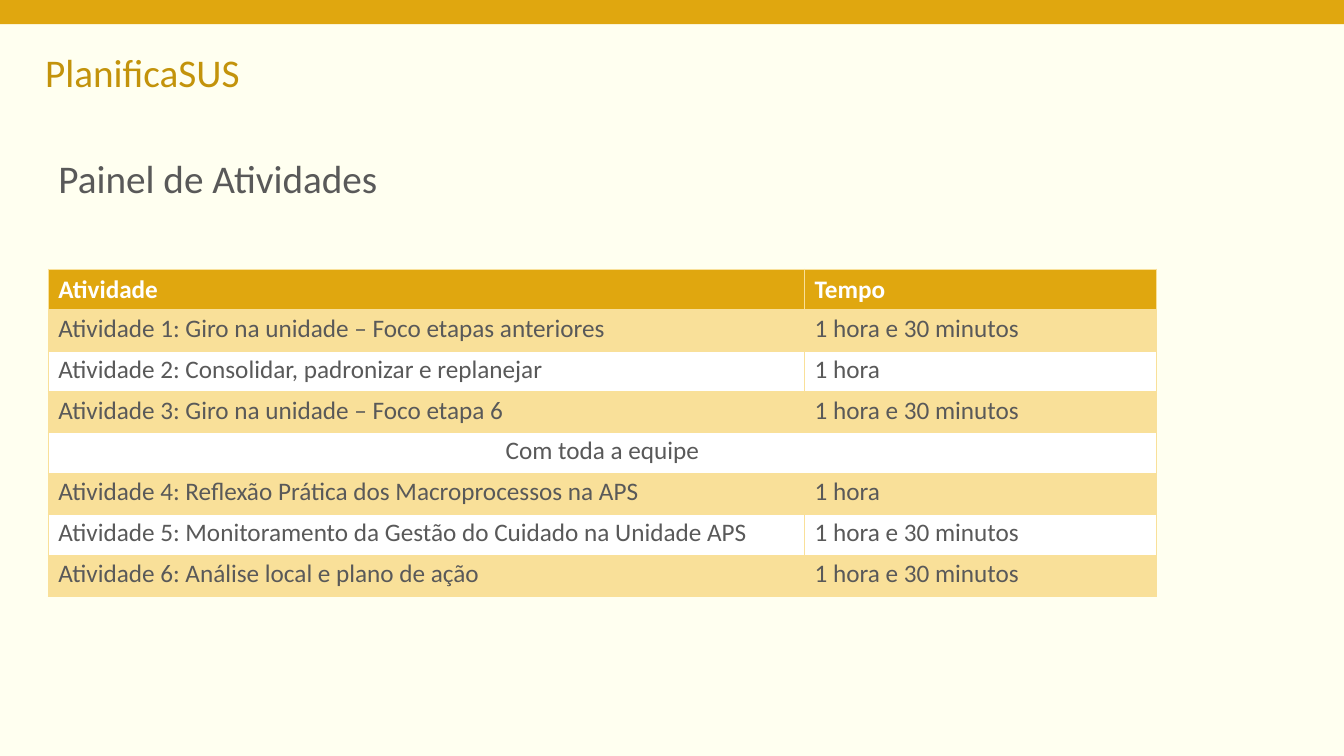
from dataclasses import dataclass

from lxml.etree import SubElement
from pptx import Presentation
from pptx.dml.color import RGBColor
from pptx.enum.shapes import MSO_SHAPE
from pptx.enum.text import MSO_ANCHOR, MSO_AUTO_SIZE, PP_ALIGN
from pptx.oxml.ns import qn
from pptx.util import Inches, Pt


@dataclass(frozen=True)
class Theme:
    font: str = "Calibri"
    background: str = "FFFFF0"
    gold: str = "E0A70F"
    dark_gold: str = "C3930B"
    pale_gold: str = "F9E099"
    white: str = "FFFFFF"
    gray: str = "595959"
    heading_size: int = 28
    table_size: int = 18
    border_width: int = 1
    line_spacing: float = 0.9


THEME = Theme()
SLIDE_WIDTH, SLIDE_HEIGHT = 13.33, 7.5
HEADER = ("Atividade", "Tempo")
WHOLE_TEAM = "Com toda a equipe"
ACTIVITIES = [
    ("Atividade 1: Giro na unidade – Foco etapas anteriores", "1 hora e 30 minutos"),
    ("Atividade 2: Consolidar, padronizar e replanejar", "1 hora"),
    ("Atividade 3: Giro na unidade – Foco etapa 6", "1 hora e 30 minutos"),
    (WHOLE_TEAM,),
    ("Atividade 4: Reflexão Prática dos Macroprocessos na APS", "1 hora"),
    ("Atividade 5: Monitoramento da Gestão do Cuidado na Unidade APS", "1 hora e 30 minutos"),
    ("Atividade 6: Análise local e plano de ação", "1 hora e 30 minutos"),
]


def paint(fill, color):
    fill.solid()
    fill.fore_color.rgb = RGBColor.from_string(color)


def write(text_frame, text, size, color, bold=False):
    """Set one formatted paragraph and return it."""
    text_frame.text = text
    para = text_frame.paragraphs[0]
    for span in para.runs:
        span.font.name = THEME.font
        span.font.size = Pt(size)
        span.font.bold = bold
        span.font.color.rgb = RGBColor.from_string(color)
    return para


def add_band(slide, left, top, width, height):
    band = slide.shapes.add_shape(
        MSO_SHAPE.RECTANGLE, Inches(left), Inches(top), Inches(width), Inches(height))
    band.shadow.inherit = False
    paint(band.fill, THEME.gold)
    band.line.fill.background()


def add_program_name(slide, left, top, width, height):
    box = slide.shapes.add_textbox(Inches(left), Inches(top), Inches(width), Inches(height))
    box.text_frame.word_wrap = False
    box.text_frame.auto_size = MSO_AUTO_SIZE.SHAPE_TO_FIT_TEXT
    write(box.text_frame, "PlanificaSUS", THEME.heading_size, THEME.dark_gold)


def place_title(slide, left, top, width, height):
    title = slide.shapes.title
    title.left, title.top = Inches(left), Inches(top)
    title.width, title.height = Inches(width), Inches(height)
    title.text_frame.vertical_anchor = MSO_ANCHOR.MIDDLE
    para = write(title.text_frame, "Painel de Atividades", THEME.heading_size, THEME.gray)
    para.alignment = PP_ALIGN.LEFT
    para.line_spacing = THEME.line_spacing


def style_cell(cell, fill_color):
    """Draw the four borders, then the fill, in the order the schema asks for."""
    properties = cell._tc.get_or_add_tcPr()
    for side in ("a:lnL", "a:lnR", "a:lnT", "a:lnB"):
        line = SubElement(properties, qn(side), w=str(Pt(THEME.border_width)))
        solid = SubElement(line, qn("a:solidFill"))
        SubElement(solid, qn("a:srgbClr"), val=THEME.pale_gold)
    paint(cell.fill, fill_color)


def add_activity_table(slide, left, top, width, height, first_column=7.5):
    rows = [HEADER, *ACTIVITIES]
    table = slide.shapes.add_table(
        len(rows), len(HEADER), Inches(left), Inches(top), Inches(width), Inches(height)).table
    table.horz_banding = False
    table.columns[0].width = Inches(first_column)
    table.columns[1].width = Inches(width - first_column)
    for row_index, texts in enumerate(rows):
        is_header = row_index == 0
        band_color = THEME.pale_gold if row_index % 2 else THEME.white
        for cell in table.rows[row_index].cells:
            style_cell(cell, THEME.gold if is_header else band_color)
        for column_index, text in enumerate(texts):
            para = write(
                table.cell(row_index, column_index).text_frame, text, THEME.table_size,
                THEME.white if is_header else THEME.gray, bold=is_header)
            if not is_header:
                para.line_spacing = THEME.line_spacing
        if len(texts) == 1:
            table.cell(row_index, 0).merge(table.cell(row_index, 1))
            para.alignment = PP_ALIGN.CENTER


def build_activity_slide(deck):
    slide = deck.slides.add_slide(deck.slide_layouts[5])
    paint(slide.background.fill, THEME.background)
    add_program_name(slide, 0.35, 0.43, 2.15, 0.57)
    add_band(slide, 0, 0, SLIDE_WIDTH, 0.24)
    place_title(slide, 0.48, 1.07, 10.99, 1.45)
    add_activity_table(slide, 0.48, 2.67, 10.99, 3.25)


def main():
    deck = Presentation()
    deck.slide_width, deck.slide_height = Inches(SLIDE_WIDTH), Inches(SLIDE_HEIGHT)
    build_activity_slide(deck)
    deck.save("out.pptx")


if __name__ == "__main__":
    main()
